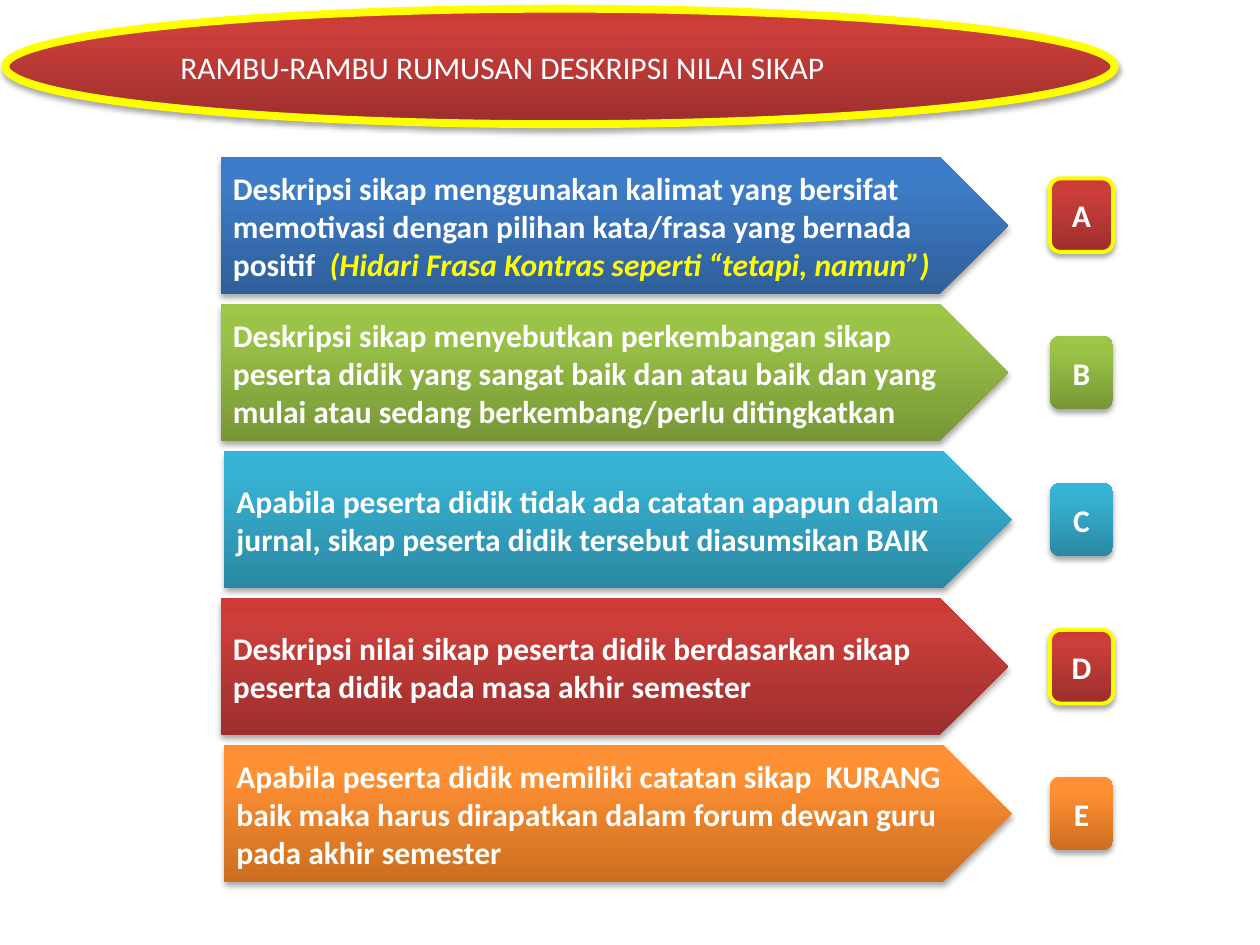
from copy import deepcopy
from pptx import Presentation
from pptx.dml.color import RGBColor as Rgb
from pptx.enum.shapes import MSO_SHAPE as Kind
from pptx.enum.text import MSO_ANCHOR as Anchor, MSO_AUTO_SIZE as Fit, PP_ALIGN as Align
from pptx.oxml import parse_xml
from pptx.oxml.ns import nsdecls, qn
from pptx.util import Pt

HUES = {
    "blue": ("2F5F99", "3D7CC7", "3A7CCB"),
    "green": ("779737", "9BC348", "9DC746"),
    "teal": ("2A88A2", "37B1D2", "34B4D6"),
    "red": ("9C2F2D", "CB3E3A", "CE3B37"),
    "orange": ("CC6E20", "FF9034", "FF9136"),
    "white": "FFFFFF",
    "yellow": "FFFF00",
}
STOPS = (0, 0.8, 1)
SHADOW = (
    f'<a:outerShdw {nsdecls("a")} blurRad="40000" dist="23000" dir="5400000" rotWithShape="0">'
    '<a:srgbClr val="000000"><a:alpha val="35000"/></a:srgbClr></a:outerShdw>'
)

TITLE = "RAMBU-RAMBU RUMUSAN DESKRIPSI NILAI SIKAP"
ROWS = [
    ("A", "blue", "red", 126, 12, 2.25,
     "Deskripsi sikap menggunakan kalimat yang bersifat memotivasi dengan "
     "pilihan kata/frasa yang bernada positif  ",
     "(Hidari Frasa Kontras seperti “tetapi, namun”)"),
    ("B", "green", "green", 126, 18, 0,
     "Deskripsi sikap menyebutkan perkembangan sikap peserta didik yang sangat baik "
     "dan atau baik dan yang mulai atau sedang berkembang/perlu ditingkatkan", ""),
    ("C", "teal", "teal", 128, 18, 0,
     "Apabila peserta didik tidak ada catatan apapun dalam jurnal, "
     "sikap peserta didik tersebut diasumsikan BAIK", ""),
    ("D", "red", "red", 126, 18, 2.25,
     "Deskripsi nilai sikap peserta didik berdasarkan sikap "
     "peserta didik pada masa akhir semester", ""),
    ("E", "orange", "orange", 128, 18, 0,
     "Apabila peserta didik memiliki catatan sikap  KURANG baik maka harus dirapatkan "
     "dalam forum dewan guru pada akhir semester", ""),
]
TOP, STEP = 90, 84


class Deck:
    font = "Calibri"
    size = 18

    def __init__(self, slide):
        self.slide = slide

    def shape(self, kind, box, hue, edge=0):
        shape = self.slide.shapes.add_shape(kind, *map(Pt, box))
        self.blend(shape, HUES[hue])
        if edge:
            shape.line.color.rgb = Rgb.from_string(HUES["yellow"])
            shape.line.width = Pt(edge)
        else:
            shape.line.fill.background()
        shape.shadow.inherit = False
        shape._element.spPr.find(qn("a:effectLst")).append(parse_xml(SHADOW))
        return shape

    def blend(self, shape, tones):
        fill = shape.fill
        fill.gradient()
        fill.gradient_angle = 90
        stops = shape._element.spPr.find(".//" + qn("a:gsLst"))
        stops.append(deepcopy(stops[-1]))
        for stop, place, tone in zip(fill.gradient_stops, STOPS, tones):
            stop.position = place
            stop.color.rgb = Rgb.from_string(tone)

    def label(self, shape, text, align=Align.LEFT, bold=True):
        frame = shape.text_frame
        frame.word_wrap = True
        frame.vertical_anchor = Anchor.MIDDLE
        para = frame.paragraphs[0]
        para.alignment = align
        para.add_run().text = text
        font = para.font
        font.name, font.size, font.bold = self.font, Pt(self.size), bold
        font.color.rgb = Rgb.from_string(HUES["white"])
        return para

    def arrow(self, box, hue, text, note):
        para = self.label(self.shape(Kind.PENTAGON, box, hue), text)
        if note:
            run = para.add_run()
            run.text = note
            run.font.italic = True
            run.font.color.rgb = Rgb.from_string(HUES["yellow"])

    def badge(self, box, hue, edge, mark):
        shape = self.shape(Kind.ROUNDED_RECTANGLE, box, hue, edge)
        self.label(shape, mark, Align.CENTER)

    def title(self, box, hue, text):
        self.shape(Kind.OVAL, box, hue, 4.5)
        left, top, width, height = box
        inset = width * 0.1464
        title = self.slide.shapes.title
        title.left, title.top = Pt(left + inset), Pt(top)
        title.width, title.height = Pt(width - 2 * inset), Pt(height)
        self.label(title, text, bold=False)
        title.text_frame.auto_size = Fit.NONE
        self.slide.shapes._spTree.append(title._element)


def main():
    prs = Presentation()
    prs.slide_width, prs.slide_height = Pt(720), Pt(540)
    deck = Deck(prs.slides.add_slide(prs.slide_layouts[5]))
    for i, (mark, hue, tint, left, drop, edge, text, note) in enumerate(ROWS):
        top = TOP + i * STEP
        deck.arrow((left, top, 450, 78), hue, text, note)
        deck.badge((600, top + drop, 36, 42), tint, edge, mark)
    deck.title((3, 5, 634, 66), "red", TITLE)
    prs.save("out.pptx")


if __name__ == "__main__":
    main()
